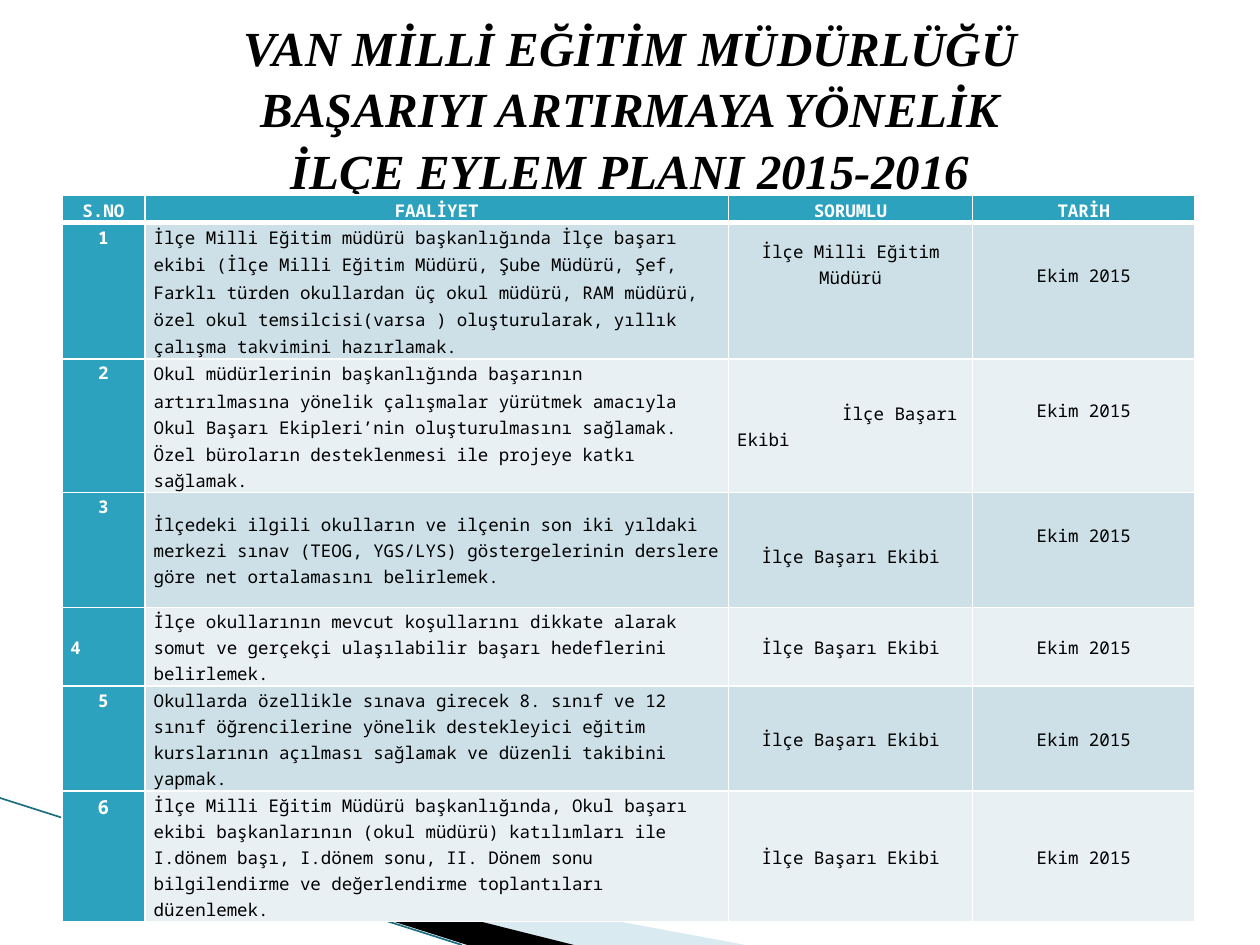
from copy import deepcopy
from dataclasses import dataclass

from lxml import etree
from pptx import Presentation
from pptx.dml.color import RGBColor
from pptx.enum import shapes, text
from pptx.oxml import ns
from pptx.util import Pt

LEFT, CENTER = text.PP_ALIGN.LEFT, text.PP_ALIGN.CENTER
TOP, MIDDLE = text.MSO_ANCHOR.TOP, text.MSO_ANCHOR.MIDDLE


@dataclass(frozen=True)
class Theme:
    title_font: str = "Times New Roman"
    body_font: str = "Noto Sans Mono"
    title: float = 28
    body: float = 10
    large: float = 11
    ink: str = "000000"
    white: str = "FFFFFF"
    accent: str = "2DA2BF"
    odd: str = "CDE0E8"
    even: str = "E8F0F4"
    wedge: str = "A0CBDC"
    edge: str = "1B6F82"


def write(para, content, *, font, size, color, bold=False, italic=False,
          align=LEFT, spacing=1.0):
    para.alignment = align
    para.line_spacing = spacing
    for number, line in enumerate(content.split("\n")):
        if number:
            para.add_line_break()
        span = para.add_run()
        span.text = line
        span.font.name = font
        span.font.size = Pt(size)
        span.font.bold = bold
        span.font.italic = italic
        span.font.color.rgb = RGBColor.from_string(color)
    for line_break in para._p.findall(ns.qn("a:br")):
        line_break.insert(0, deepcopy(span._r.rPr))


class Painter:
    def __init__(self, page, theme):
        self.page = page
        self.theme = theme

    def title(self, content, left, top, width, height):
        box = self.page.shapes.title
        box.left, box.top, box.width, box.height = map(Pt, (left, top, width, height))
        frame = box.text_frame
        frame.auto_size = text.MSO_AUTO_SIZE.NONE
        frame.vertical_anchor = MIDDLE
        write(frame.paragraphs[0], content, font=self.theme.title_font,
              size=self.theme.title, color=self.theme.ink, bold=True,
              italic=True, align=CENTER, spacing=1.05)

    def polygon(self, points, color, opacity=100):
        start, *rest = [(Pt(x), Pt(y)) for x, y in points]
        builder = self.page.shapes.build_freeform(*start)
        builder.add_line_segments(rest, close=True)
        shape = builder.convert_to_shape()
        shape.shadow.inherit = False
        shape.line.fill.background()
        shape.fill.solid()
        shape.fill.fore_color.rgb = RGBColor.from_string(color)
        if opacity < 100:
            tint = shape._element.spPr.find(".//" + ns.qn("a:srgbClr"))
            etree.SubElement(tint, ns.qn("a:alpha"), val=str(opacity * 1000))

    def line(self, start, end, color, width):
        connector = self.page.shapes.add_connector(
            shapes.MSO_CONNECTOR.STRAIGHT, *map(Pt, (*start, *end)))
        connector.line.color.rgb = RGBColor.from_string(color)
        connector.line.width = Pt(width)
        etree.SubElement(connector._element.spPr, ns.qn("a:effectLst"))

    def table(self, left, top, widths, heights):
        box = self.page.shapes.add_table(
            len(heights), len(widths), Pt(left), Pt(top),
            Pt(sum(widths)), Pt(sum(heights)))
        for column, width in zip(box.table.columns, widths):
            column.width = Pt(width)
        for row, height in zip(box.table.rows, heights):
            row.height = Pt(height)
        return box.table

    def borders(self, cell, top, bottom):
        properties = cell._tc.get_or_add_tcPr()
        sides = {"lnL": 1, "lnR": 1, "lnT": top, "lnB": bottom}
        for place, (side, width) in enumerate(sides.items()):
            border = etree.Element(ns.qn("a:" + side), w=str(Pt(width)))
            fill = etree.SubElement(border, ns.qn("a:solidFill"))
            etree.SubElement(fill, ns.qn("a:srgbClr"), val=self.theme.white)
            properties.insert(place, border)

    def cell(self, cell, spans, fill, *, anchor=MIDDLE, above=0, below=0,
             indent=0, top=1, bottom=1, **style):
        cell.fill.solid()
        cell.fill.fore_color.rgb = RGBColor.from_string(fill)
        self.borders(cell, top, bottom)
        cell.vertical_anchor = anchor
        cell.margin_left = cell.margin_right = Pt(5)
        cell.margin_top, cell.margin_bottom = Pt(above), Pt(below)
        para = cell.text_frame.paragraphs[0]
        if indent:
            para._p.get_or_add_pPr().set("indent", str(Pt(indent)))
        for content, size in spans:
            write(para, content, font=self.theme.body_font, size=size, **style)


HEADINGS = ["S.NO", "FAALİYET", "SORUMLU", "TARİH"]
TEAM = "İlçe Başarı Ekibi"
DATE = "Ekim 2015"
ACTIVITIES = [
    ["İlçe Milli Eğitim müdürü başkanlığında İlçe başarı ekibi (İlçe Milli Eğitim Müdürü, "
     "Şube Müdürü, Şef, Farklı türden okullardan üç okul müdürü, RAM müdürü, özel okul "
     "temsilcisi(varsa ) oluşturularak, yıllık çalışma takvimini hazırlamak."],
    ["Okul müdürlerinin başkanlığında başarının artırılmasına yönelik çalışmalar yürütmek "
     "amacıyla", " ", "Okul Başarı Ekipleri’nin oluşturulmasını sağlamak. Özel büroların "
     "desteklenmesi ile projeye katkı sağlamak."],
    ["İlçedeki ilgili okulların ve ilçenin son iki yıldaki merkezi sınav (TEOG, YGS/LYS) "
     "göstergelerinin derslere göre net ortalamasını belirlemek."],
    ["İlçe okullarının mevcut koşullarını dikkate alarak somut ve gerçekçi ulaşılabilir "
     "başarı hedeflerini belirlemek."],
    ["Okullarda özellikle sınava girecek 8. sınıf ve 12 sınıf öğrencilerine yönelik "
     "destekleyici eğitim kurslarının açılması sağlamak ve düzenli takibini yapmak."],
    ["İlçe Milli Eğitim Müdürü başkanlığında, Okul başarı ekibi başkanlarının (okul müdürü) "
     "katılımları ile I.dönem başı, I.dönem sonu, II. Dönem sonu bilgilendirme ve "
     "değerlendirme toplantıları düzenlemek."],
]
OWNERS = {1: "İlçe Milli Eğitim Müdürü"}
OWNER_FORMATS = {1: {"below": 31}, 2: {"align": LEFT, "indent": 60}, 3: {"above": 6}}
NUMBER_FORMATS = {4: {"align": LEFT, "anchor": MIDDLE}}


def fill_plan(painter, table):
    theme = painter.theme
    heading = {"color": theme.white, "bold": True, "align": CENTER}
    for column, label in enumerate(HEADINGS):
        painter.cell(table.cell(0, column), [(label, theme.body)], theme.accent,
                     bottom=3, spacing=1.15, **heading)
    for row, activity in enumerate(ACTIVITIES, 1):
        fill = theme.odd if row % 2 else theme.even
        top = 3 if row == 1 else 1
        wide = 1.15 if row == 1 else 1.1
        number_size = theme.large if row == len(ACTIVITIES) else theme.body
        number = {"anchor": TOP, **heading, **NUMBER_FORMATS.get(row, {})}
        painter.cell(table.cell(row, 0), [(str(row), number_size)], theme.accent,
                     top=top, spacing=wide, **number)
        spans = [(part, theme.large if part == " " else theme.body) for part in activity]
        painter.cell(table.cell(row, 1), spans, fill, top=top,
                     color=theme.ink, spacing=wide)
        plain = {"top": top, "color": theme.ink, "align": CENTER, "spacing": 1.1}
        owner = {**plain, **OWNER_FORMATS.get(row, {})}
        painter.cell(table.cell(row, 2), [(OWNERS.get(row, TEAM), theme.body)], fill, **owner)
        painter.cell(table.cell(row, 3), [(DATE, theme.body)], fill,
                     below=18 if row <= 3 else 0, **plain)


def main():
    deck = Presentation()
    deck.slide_width, deck.slide_height = Pt(720), Pt(540)
    page = deck.slides.add_slide(deck.slide_layouts[5])
    theme = Theme()
    painter = Painter(page, theme)
    painter.polygon([(39.6, 468.5), (426, 540), (328, 540)], theme.wedge, 40)
    painter.polygon([(38.2, 467.5), (328, 540), (267, 540)], theme.ink)
    painter.line((0, 456), (264, 540), theme.edge, 0.95)
    painter.title("VAN MİLLİ EĞİTİM MÜDÜRLÜĞÜ\nBAŞARIYI ARTIRMAYA YÖNELİK\n"
                  "İLÇE EYLEM PLANI 2015-2016", 36, 16, 648, 90)
    table = painter.table(35.3, 111.5, [47.5, 333.5, 139.5, 127],
                          [15.5, 78, 76.3, 65.7, 45, 60, 74])
    fill_plan(painter, table)
    deck.save("out.pptx")


if __name__ == "__main__":
    main()
